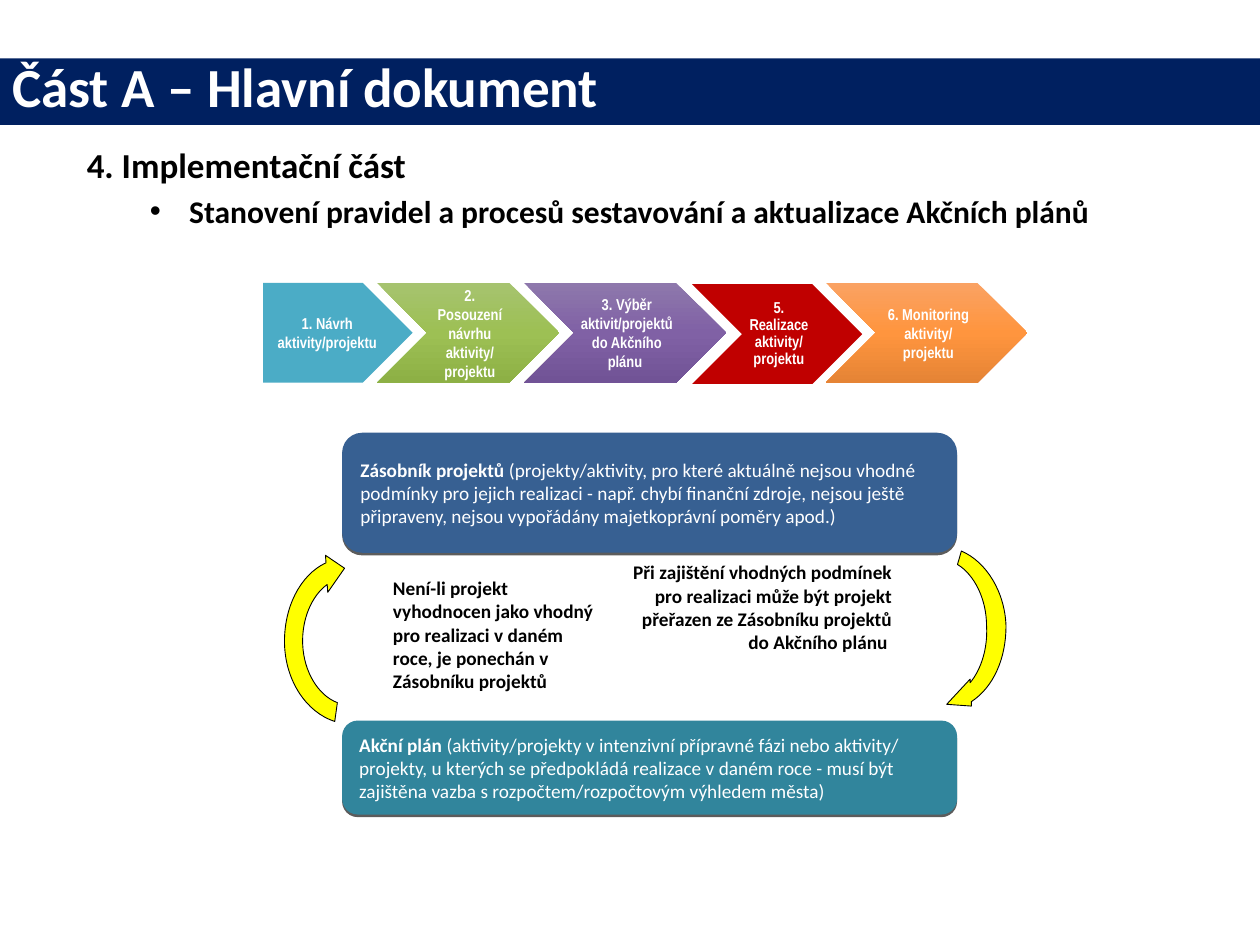
from copy import deepcopy
from dataclasses import dataclass

from lxml.etree import SubElement
from pptx import Presentation
from pptx.dml.color import RGBColor
from pptx.enum.shapes import MSO_SHAPE as Preset
from pptx.enum.text import MSO_ANCHOR as Anchor, PP_ALIGN as Align
from pptx.oxml.ns import qn
from pptx.util import Pt

Point = tuple[float, float]


@dataclass(frozen=True)
class Theme:
    navy: str = "002060"
    white: str = "FFFFFF"
    black: str = "000000"
    yellow: str = "FFFF00"
    font: str = "Calibri"
    narrow: str = "Arial Narrow"
    title: float = 31.5
    heading: float = 20
    bullet: float = 18
    body: float = 11
    step: float = 9


THEME = Theme()
NO_BREAK = chr(160)


@dataclass(frozen=True)
class Box:
    left: float
    top: float
    width: float
    height: float

    def lengths(self) -> list[Pt]:
        return [Pt(value) for value in (self.left, self.top, self.width, self.height)]


@dataclass(frozen=True)
class Step:
    left: float
    width: float
    colors: tuple[str, ...]
    text: str
    top: float = 161.7
    line_spacing: float = 1
    preset: Preset = Preset.CHEVRON


@dataclass(frozen=True)
class Stack:
    box: Box
    color: str
    lead: str
    detail: str


@dataclass(frozen=True)
class Note:
    box: Box
    text: str
    align: Align
    anchor: Anchor
    top_inset: float = 3.6


@dataclass(frozen=True)
class CurvedArrow:
    """Each segment holds one point for a line or three for a Bézier curve."""
    start: Point
    segments: tuple[tuple[Point, ...], ...]


STEP_HEIGHT = 57
STEPS = (
    Step(150.4, 85.4, ("4BACC6",), "1. Návrh aktivity/projektu", preset=Preset.PENTAGON),
    Step(215.5, 104, ("A6C36F", "9DC054", "8DB045"), "2. Posouzení návrhu aktivity/\nprojektu"),
    Step(299.5, 115.4, ("8E78AC", "8061A5", "715396"), "3. Výběr aktivit/projektů do Akčního plánu "),
    Step(395.5, 97.2, ("C00000",), "5. Realizace aktivity/\nprojektu", 162.4, 0.9),
    Step(472, 115, ("FAA263", "FF953E", "E58435"), "6. Monitoring aktivity/\nprojektu"),
)
NOTES = (
    Note(Box(217.5, 322.5, 136, 80),
         f"Není-li projekt vyhodnocen jako{NO_BREAK}vhodný pro realizaci v{NO_BREAK}daném roce, "
         "je ponechán v Zásobníku projektů", Align.LEFT, Anchor.MIDDLE),
    Note(Box(353.5, 320.4, 163.4, 80),
         f"Při zajištění vhodných podmínek pro{NO_BREAK}realizaci může být projekt přeřazen "
         f"ze{NO_BREAK}Zásobníku projektů do Akčního plánu ", Align.RIGHT, Anchor.TOP, 0),
)
STACKS = (
    Stack(Box(195.5, 247.3, 351.4, 68.6), "376092", "Zásobník projektů ",
          "(projekty/aktivity, pro které aktuálně nejsou vhodné podmínky pro jejich realizaci "
          "- např. chybí finanční zdroje, nejsou ještě připraveny, nejsou vypořádány "
          "majetkoprávní poměry apod.)"),
    Stack(Box(195.5, 411.8, 351.4, 53.7), "31859C", "Akční plán ",
          f"(aktivity/projekty v intenzivní{NO_BREAK}přípravné fázi nebo aktivity/ projekty, "
          f"u{NO_BREAK}kterých se předpokládá realizace v{NO_BREAK}daném roce - musí být "
          f"zajištěna vazba s{NO_BREAK}rozpočtem/rozpočtovým výhledem města)"),
)
ARROWS = (
    CurvedArrow((549.4, 314.9), (
        ((563.8, 321.1), (574.3, 338.4), (574.9, 357.8)),
        ((574.9, 375.8), (568.1, 392.4), (555.1, 401)),
        ((555.1, 403.5),), ((541, 402.5),), ((554.4, 388.1),), ((554.4, 390.2),),
        ((560.9, 382.3), (564.5, 370.1), (563.8, 357.8)),
        ((563.8, 342), (556.6, 328.3), (547.2, 322.6)))),
    CurvedArrow((191.3, 412.3), (
        ((175, 407), (163.2, 389), (162.6, 368.2)),
        ((162, 347.5), (171.4, 328.5), (186.3, 321.6)),
        ((186, 317.3),), ((196.9, 324.7),), ((187.3, 338.5),), ((187, 334)),
        ((178, 340.5), (172.4, 354), (173, 368.2)),
        ((173.6, 384), (182, 397.5), (192.8, 401.5)))),
)


def paint(shape, *colors: str) -> None:
    """Fill with one colour, or with an evenly stepped top-down gradient of three."""
    shape.shadow.inherit = False
    shape.line.fill.background()
    if len(colors) == 1:
        shape.fill.solid()
        shape.fill.fore_color.rgb = RGBColor.from_string(colors[0])
        return
    shape.fill.gradient()
    shape.fill.gradient_angle = 270
    stop_list = shape._element.spPr.find(qn("a:gradFill")).find(qn("a:gsLst"))
    stop_list.append(deepcopy(stop_list[0]))
    for index, (stop, color) in enumerate(zip(shape.fill.gradient_stops, colors)):
        stop.position = index / (len(colors) - 1)
        stop.color.rgb = RGBColor.from_string(color)


def format_paragraph(paragraph, size: float, color: str, align: Align = Align.LEFT,
                     font: str = THEME.font, line_spacing: float = 1) -> None:
    paragraph.alignment = align
    paragraph.line_spacing = line_spacing
    for run in paragraph.runs:
        run.font.name, run.font.size, run.font.bold = font, Pt(size), True
        run.font.color.rgb = RGBColor.from_string(color)


def add_text(slide, box: Box, text: str, anchor: Anchor):
    text_frame = slide.shapes.add_textbox(*box.lengths()).text_frame
    text_frame.word_wrap = True
    text_frame.vertical_anchor = anchor
    text_frame.text = text
    return text_frame


def add_title(slide, text: str) -> None:
    shape = slide.shapes.add_shape(Preset.RECTANGLE, *Box(0, 33.4, 720, 38).lengths())
    paint(shape, THEME.navy)
    shape.text_frame.text = text
    format_paragraph(shape.text_frame.paragraphs[0], THEME.title, THEME.white, line_spacing=0.8)


def add_outline(slide, heading: str, bullet: str) -> None:
    text_frame = add_text(slide, Box(42.5, 78.5, 663, 463), f"{heading}\n{bullet}", Anchor.TOP)
    for paragraph, size in zip(text_frame.paragraphs, (THEME.heading, THEME.bullet)):
        format_paragraph(paragraph, size, THEME.black)
        paragraph.space_before = Pt(size * 0.2)
    properties = text_frame.paragraphs[1]._p.get_or_add_pPr()
    properties.set("marL", str(Pt(58.5)))
    properties.set("indent", str(Pt(-22.5)))
    SubElement(properties, qn("a:buFont"), typeface="Arial")
    SubElement(properties, qn("a:buChar"), char="•")


def add_step(slide, step: Step) -> None:
    box = Box(step.left, step.top, step.width, STEP_HEIGHT)
    paint(slide.shapes.add_shape(step.preset, *box.lengths()), *step.colors)
    notch = STEP_HEIGHT / 2 if step.preset == Preset.CHEVRON else 0
    tip = STEP_HEIGHT / 2 if notch else STEP_HEIGHT / 4
    label = Box(step.left + notch, step.top, step.width - notch - tip, STEP_HEIGHT)
    text_frame = add_text(slide, label, step.text, Anchor.MIDDLE)
    text_frame.margin_left, text_frame.margin_right = Pt(3), Pt(1)
    text_frame.margin_top = text_frame.margin_bottom = Pt(2)
    for paragraph in text_frame.paragraphs:
        format_paragraph(paragraph, THEME.step, THEME.white, Align.CENTER, THEME.narrow,
                         step.line_spacing)


def add_note(slide, note: Note) -> None:
    text_frame = add_text(slide, note.box, note.text, note.anchor)
    text_frame.margin_top = Pt(note.top_inset)
    format_paragraph(text_frame.paragraphs[0], THEME.body, THEME.black, note.align)


def add_stack(slide, stack: Stack) -> None:
    shape = slide.shapes.add_shape(Preset.ROUNDED_RECTANGLE, *stack.box.lengths())
    paint(shape, stack.color)
    effects = shape._element.spPr.find(qn("a:effectLst"))
    shadow = SubElement(effects, qn("a:outerShdw"), dist=str(Pt(1.5)), dir="5400000")
    color = SubElement(shadow, qn("a:srgbClr"), val=THEME.black)
    SubElement(color, qn("a:alpha"), val="63000")
    paragraph = shape.text_frame.paragraphs[0]
    paragraph.text = stack.lead
    detail = paragraph.add_run()
    detail.text = stack.detail
    format_paragraph(paragraph, THEME.body, THEME.white)
    detail.font.bold = False


def add_curved_arrow(slide, arrow: CurvedArrow) -> None:
    """Build the outline through all points, then turn each triple into a Bézier curve."""
    segments = [segment if isinstance(segment[0], tuple) else (segment,)
                for segment in arrow.segments]
    builder = slide.shapes.build_freeform(*(Pt(value) for value in arrow.start))
    builder.add_line_segments([(Pt(x), Pt(y)) for segment in segments for x, y in segment])
    shape = builder.convert_to_shape()
    outline = next(shape._element.iter(qn("a:path")))
    lines = iter(outline.findall(qn("a:lnTo")))
    for segment in segments:
        group = [next(lines) for _ in segment]
        if len(group) == 3:
            curve = SubElement(outline, qn("a:cubicBezTo"))
            group[0].addprevious(curve)
            for line in group:
                curve.append(line[0])
                outline.remove(line)
    SubElement(outline, qn("a:close"))
    paint(shape, THEME.yellow)
    shape.line.color.rgb = RGBColor.from_string(THEME.black)
    shape.line.width = Pt(0.5)


def main() -> None:
    presentation = Presentation()
    presentation.slide_width, presentation.slide_height = Pt(720), Pt(540)
    slide = presentation.slides.add_slide(presentation.slide_layouts[6])
    add_title(slide, "Část A – Hlavní dokument")
    add_outline(slide, "4. Implementační část",
                "Stanovení pravidel a procesů sestavování a aktualizace Akčních plánů")
    for add, items in ((add_step, STEPS), (add_note, NOTES), (add_stack, STACKS),
                       (add_curved_arrow, ARROWS)):
        for item in items:
            add(slide, item)
    presentation.save("out.pptx")


if __name__ == "__main__":
    main()
